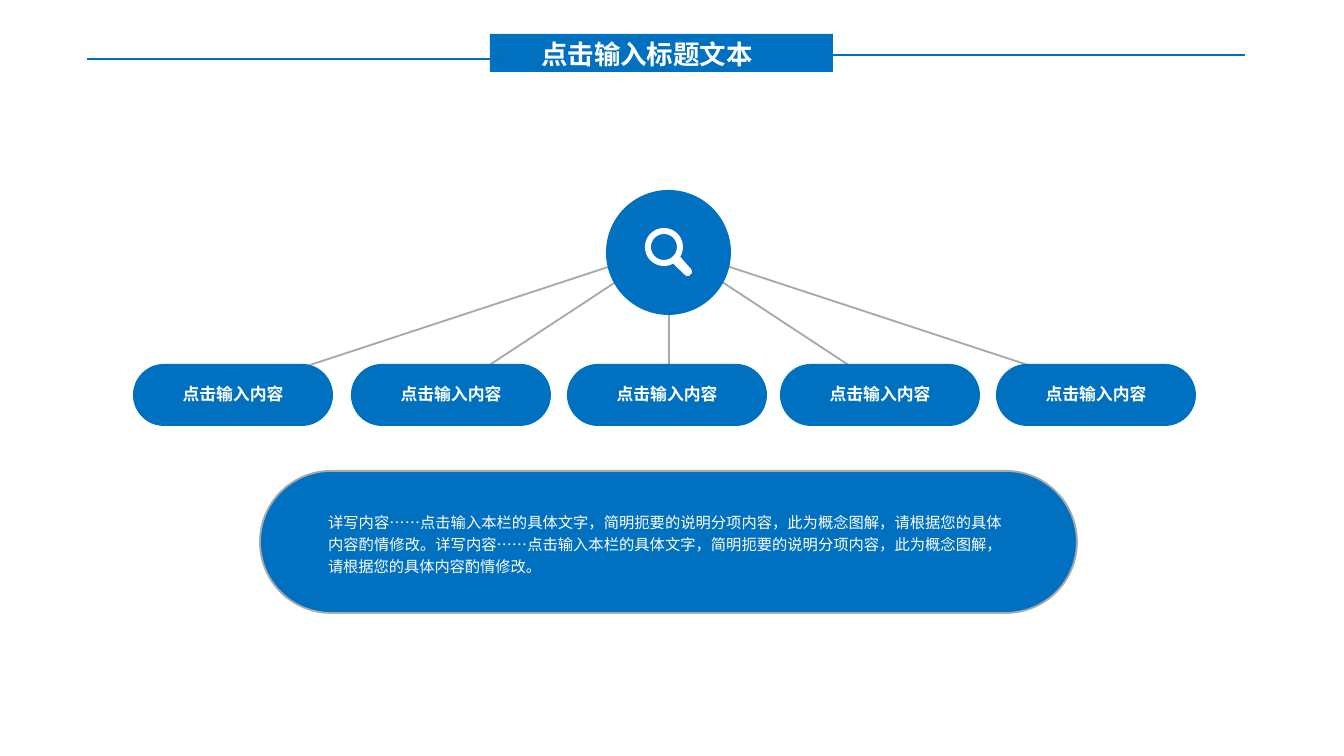
"""Build a slide with one search hub linked to five topics and a description."""
import math

import pptx
import pptx.dml.color
import pptx.enum.shapes
import pptx.enum.text
import pptx.oxml.ns
import pptx.util
from lxml import etree

RGBColor = pptx.dml.color.RGBColor
SHAPE = pptx.enum.shapes.MSO_SHAPE
ALIGN = pptx.enum.text.PP_ALIGN
ANCHOR = pptx.enum.text.MSO_ANCHOR
Pt = pptx.util.Pt

BLUE = RGBColor(0x00, 0x70, 0xC0)
RULE_BLUE = RGBColor(0x00, 0x6E, 0xBC)
GRAY = RGBColor(0xA6, 0xAA, 0xA9)
WHITE = RGBColor(0xFF, 0xFF, 0xFF)
FONT = "Noto Sans CJK SC"
PX = 914400 / 134.4

TITLE = "点击输入标题文本"
TOPICS = [
    ("点击输入内容", 133),
    ("点击输入内容", 351),
    ("点击输入内容", 567),
    ("点击输入内容", 780),
    ("点击输入内容", 996),
]
DESCRIPTION = "详写内容……点击输入本栏的具体文字，简明扼要的说明分项内容，此为概念图解，请根据您的具体内容酌情修改。" * 2
TITLE_RULES = [(87, 501, 59), (831, 1245, 55)]

PILL_TOP, PILL_WIDTH, PILL_HEIGHT = 364, 200, 62
SPOKE_START, SPOKE_END_Y, SPOKE_STEP = (669, 247), 391, 219
LENS_CENTER, LENS_OUTER, LENS_INNER = (664, 247), 19, 13
HANDLE = [(691, 269), (692, 271), (692, 273), (689, 276), (687, 276), (685, 275)]

TITLE_FORMAT = {"alignment": ALIGN.LEFT}
LABEL_FORMAT = {"alignment": ALIGN.CENTER, "line_spacing": 0.9, "space_before": Pt(10)}
BODY_FORMAT = {"alignment": ALIGN.JUSTIFY, "line_spacing": 1.2, "space_before": Pt(10)}
NO_INSETS = dict.fromkeys(("margin_left", "margin_top", "margin_right", "margin_bottom"), 0)


def emu(*lengths):
    return [round(length * PX) for length in lengths]


def assign(target, values):
    for key, value in values.items():
        setattr(target, key, value)


def paint(shape, fill, line=None):
    shape.shadow.inherit = False
    shape.fill.solid()
    shape.fill.fore_color.rgb = fill
    if line is None:
        shape.line.fill.background()
    else:
        shape.line.color.rgb = line
        shape.line.width = Pt(1)


def add_block(slide, kind, box, line=None):
    block = slide.shapes.add_shape(kind, *emu(*box))
    if kind == SHAPE.ROUNDED_RECTANGLE:
        block.adjustments[0] = 0.5
    paint(block, BLUE, line)


def add_rule(slide, start, end, color, width):
    rule = slide.shapes.add_connector(
        pptx.enum.shapes.MSO_CONNECTOR.STRAIGHT, *emu(*start, *end))
    rule.line.color.rgb = color
    rule.line.width = Pt(width)
    etree.SubElement(rule.element.spPr, pptx.oxml.ns.qn("a:effectLst"))


def add_text(slide, words, box, size, bold, paragraph_format, frame_format):
    frame = slide.shapes.add_textbox(*emu(*box)).text_frame
    assign(frame, {"word_wrap": True, **frame_format})
    paragraph = frame.paragraphs[0]
    assign(paragraph, paragraph_format)
    run = paragraph.add_run()
    run.text = words
    assign(run.font, {"name": FONT, "size": Pt(size), "bold": bold})
    run.font.color.rgb = WHITE
    east_asian = etree.SubElement(run.font._element, pptx.oxml.ns.qn("a:ea"))
    east_asian.set("typeface", FONT)


def arc(radius, first, last, step):
    x, y = LENS_CENTER
    return [(x + radius * math.cos(math.radians(angle)),
             y + radius * math.sin(math.radians(angle)))
            for angle in range(first, last, step)]


def add_magnifier(slide):
    outside = [emu(*point) for point in arc(LENS_OUTER, 61, 396, 6) + HANDLE]
    inside = [emu(*point) for point in arc(LENS_INNER, 360, 0, -8)]
    builder = slide.shapes.build_freeform(*outside[0])
    builder.add_line_segments(outside[1:], close=True)
    builder.move_to(*inside[0])
    builder.add_line_segments(inside[1:], close=True)
    paint(builder.convert_to_shape(), WHITE)


def main():
    deck = pptx.Presentation()
    deck.slide_width, deck.slide_height = emu(1344, 756)
    slide = deck.slides.add_slide(deck.slide_layouts[6])
    centered = {"vertical_anchor": ANCHOR.MIDDLE, **NO_INSETS}

    for index in range(len(TOPICS)):
        end_x = SPOKE_START[0] + (index - len(TOPICS) // 2) * SPOKE_STEP
        add_rule(slide, SPOKE_START, (end_x, SPOKE_END_Y), GRAY, 1)
    for label, left in TOPICS:
        add_block(slide, SHAPE.ROUNDED_RECTANGLE, (left, PILL_TOP, PILL_WIDTH, PILL_HEIGHT))
        add_text(slide, label, (left + 1, PILL_TOP + 10, PILL_WIDTH - 2, 43),
                 9, True, LABEL_FORMAT, centered)

    add_block(slide, SHAPE.ROUNDED_RECTANGLE, (260, 471, 817, 142), GRAY)
    add_text(slide, DESCRIPTION, (328, 503, 675, 79), 8.2, False, BODY_FORMAT, centered)
    add_block(slide, SHAPE.OVAL, (606, 190, 125, 125))
    add_magnifier(slide)

    add_block(slide, SHAPE.RECTANGLE, (490, 34, 343, 38))
    add_text(slide, TITLE, (528, 31, 250, 46), 14.2, True, TITLE_FORMAT,
             {"auto_size": pptx.enum.text.MSO_AUTO_SIZE.SHAPE_TO_FIT_TEXT})
    for start_x, end_x, y in TITLE_RULES:
        add_rule(slide, (start_x, y), (end_x, y), RULE_BLUE, 0.75)

    deck.save("out.pptx")


if __name__ == "__main__":
    main()
